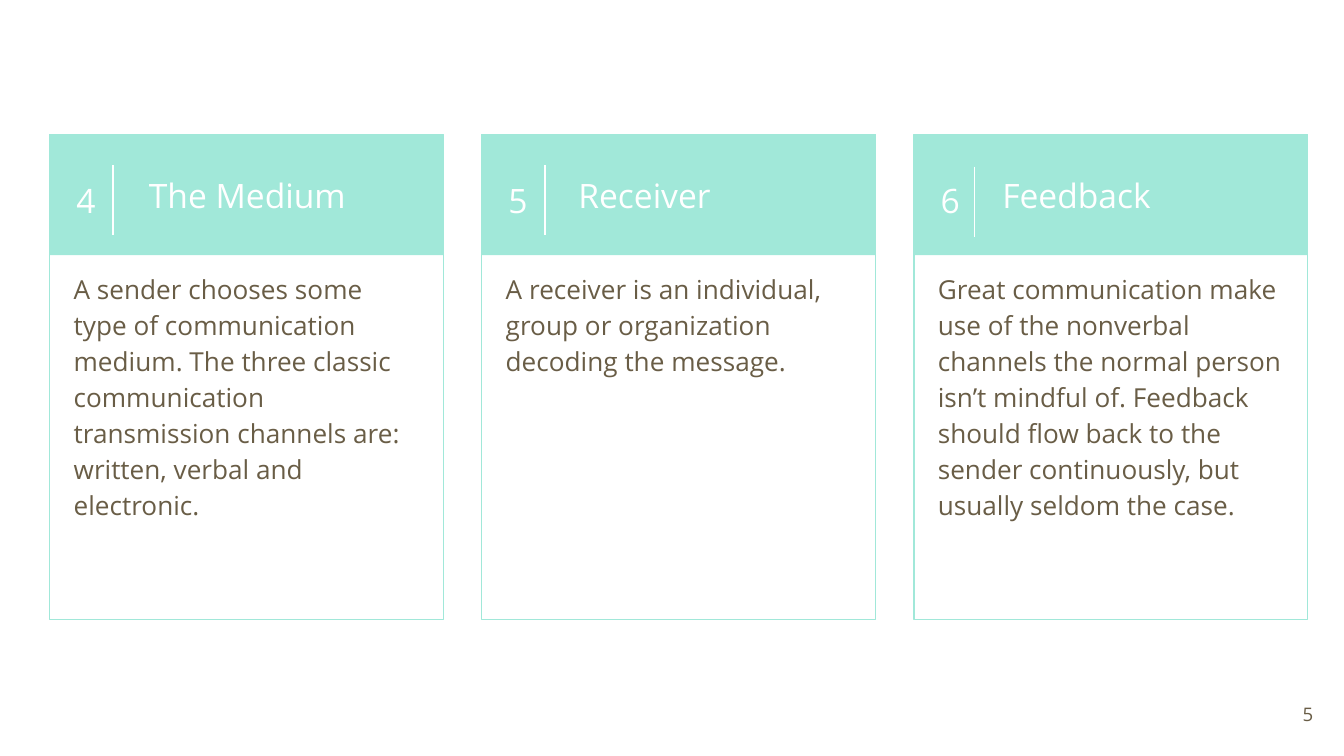
import dataclasses

import pptx
import pptx.dml.color
import pptx.enum.shapes
import pptx.enum.text
import pptx.oxml.ns
import pptx.shapes.autoshape
import pptx.slide
import pptx.util
from lxml import etree

Inches = pptx.util.Inches
Pt = pptx.util.Pt
Align = pptx.enum.text.PP_ALIGN
Anchor = pptx.enum.text.MSO_ANCHOR
Fit = pptx.enum.text.MSO_AUTO_SIZE

FONT = "Open Sans"
MINT = "A1E8D9"
WHITE = "FFFFFF"
BROWN = "695D46"

PAGE = 10
LEFT, LAST, TOP = 0.37, 6.8, 1.0
WIDTH, HEIGHT, HEAD = 2.93, 3.61, 0.9


@dataclasses.dataclass
class Card:
    number: str
    title: str
    body: str
    indent: float  # from card edge to title box
    rule: float = 0.47  # from card edge to divider
    drop: float = 0.23  # from card top to divider


CARDS = [
    Card("4", "The Medium",
         "A sender chooses some type of communication medium. The three classic "
         "communication transmission channels are: written, verbal and electronic.",
         indent=0.64),
    Card("5", "Receiver",
         "A receiver is an individual, group or organization decoding the message.",
         indent=0.62),
    Card("6", "Feedback",
         "Great communication make use of the nonverbal channels the normal person "
         "isn’t mindful of. Feedback should flow back to the sender continuously, "
         "but usually seldom the case.",
         indent=0.56, rule=0.45, drop=0.24),
]


def color(code: str) -> pptx.dml.color.RGBColor:
    return pptx.dml.color.RGBColor.from_string(code)


def add_box(slide: pptx.slide.Slide, x: float,
            height: float) -> pptx.shapes.autoshape.Shape:
    """Add a card-wide rectangle without fill, line or shadow."""
    box = slide.shapes.add_shape(
        pptx.enum.shapes.MSO_SHAPE.RECTANGLE,
        Inches(x), Inches(TOP), Inches(WIDTH), Inches(height))
    box.shadow.inherit = False
    box.fill.background()
    box.line.fill.background()
    return box


def add_rule(slide: pptx.slide.Slide, x: float, y: float) -> None:
    """Add the white divider beside a card number."""
    line = slide.shapes.add_connector(
        pptx.enum.shapes.MSO_CONNECTOR.STRAIGHT,
        Inches(x), Inches(y), Inches(x), Inches(y + 0.52))
    line.line.color.rgb = color(WHITE)
    line.line.width = Pt(0.75)
    etree.SubElement(line.element.spPr, pptx.oxml.ns.qn("a:effectLst"))


def add_text(slide: pptx.slide.Slide, text: str, x: float, y: float,
             width: float, height: float, size: int, code: str,
             anchor: Anchor = Anchor.TOP, align: Align = Align.LEFT,
             pad: float = 0.1, wrap: bool = True, space: float = 1.0) -> None:
    box = slide.shapes.add_textbox(
        Inches(x), Inches(y), Inches(width), Inches(height))
    frame = box.text_frame
    frame.word_wrap = wrap
    frame.auto_size = Fit.NONE if wrap else Fit.SHAPE_TO_FIT_TEXT
    frame.vertical_anchor = anchor
    frame.margin_left = frame.margin_right = Inches(0.1)
    frame.margin_top = frame.margin_bottom = Inches(pad)
    para = frame.paragraphs[0]
    para.text = text
    para.alignment = align
    para.line_spacing = space
    para.font.name = FONT
    para.font.size = Pt(size)
    para.font.color.rgb = color(code)


def add_card(slide: pptx.slide.Slide, card: Card, x: float) -> None:
    edge = add_box(slide, x, HEIGHT)
    edge.line.color.rgb = color(MINT)
    edge.line.width = Pt(0.75)
    head = add_box(slide, x, HEAD)
    head.fill.solid()
    head.fill.fore_color.rgb = color(MINT)

    add_rule(slide, x + card.rule, TOP + card.drop)
    add_text(slide, card.number, x + 0.1, TOP + 0.29, 0.35, 0.4, 18, WHITE,
             pad=0.05, wrap=False)
    add_text(slide, card.title, x + card.indent, TOP, 2.3, HEAD, 18, WHITE,
             anchor=Anchor.MIDDLE)
    add_text(slide, card.body, x + 0.08, TOP + HEAD, 2.77, 2.6, 14, BROWN,
             space=1.15)


def main() -> None:
    deck = pptx.Presentation()
    deck.slide_width = Inches(PAGE)
    deck.slide_height = Inches(PAGE * 9 / 16)
    slide = deck.slides.add_slide(deck.slide_layouts.get_by_name("Blank"))

    pitch = (LAST - LEFT) / (len(CARDS) - 1)
    for i, card in enumerate(CARDS):
        add_card(slide, card, LEFT + i * pitch)
    add_text(slide, "5", 9.27, 5.1, 0.6, 0.43, 10, BROWN,
             anchor=Anchor.MIDDLE, align=Align.RIGHT)
    deck.save("out.pptx")


if __name__ == "__main__":
    main()
